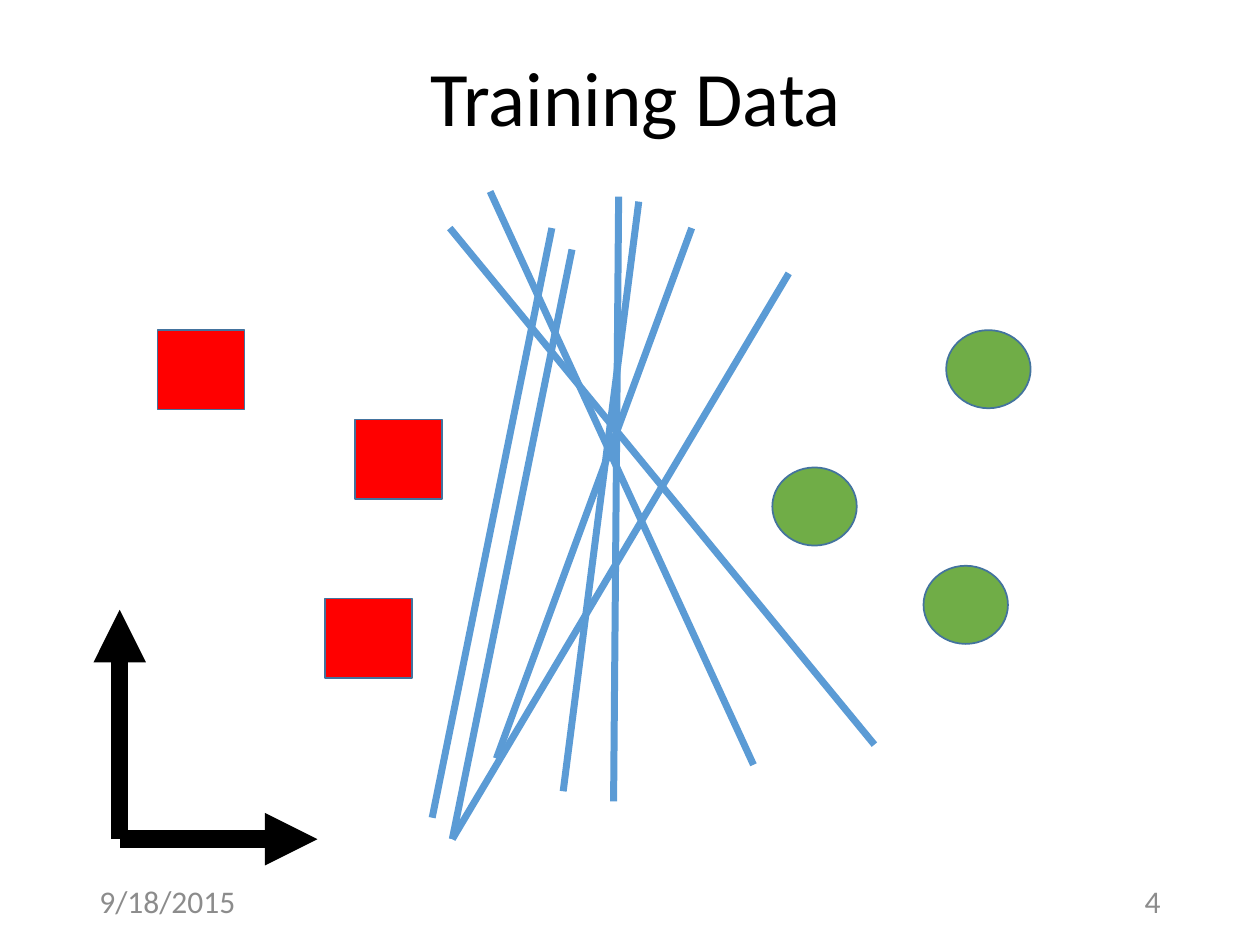
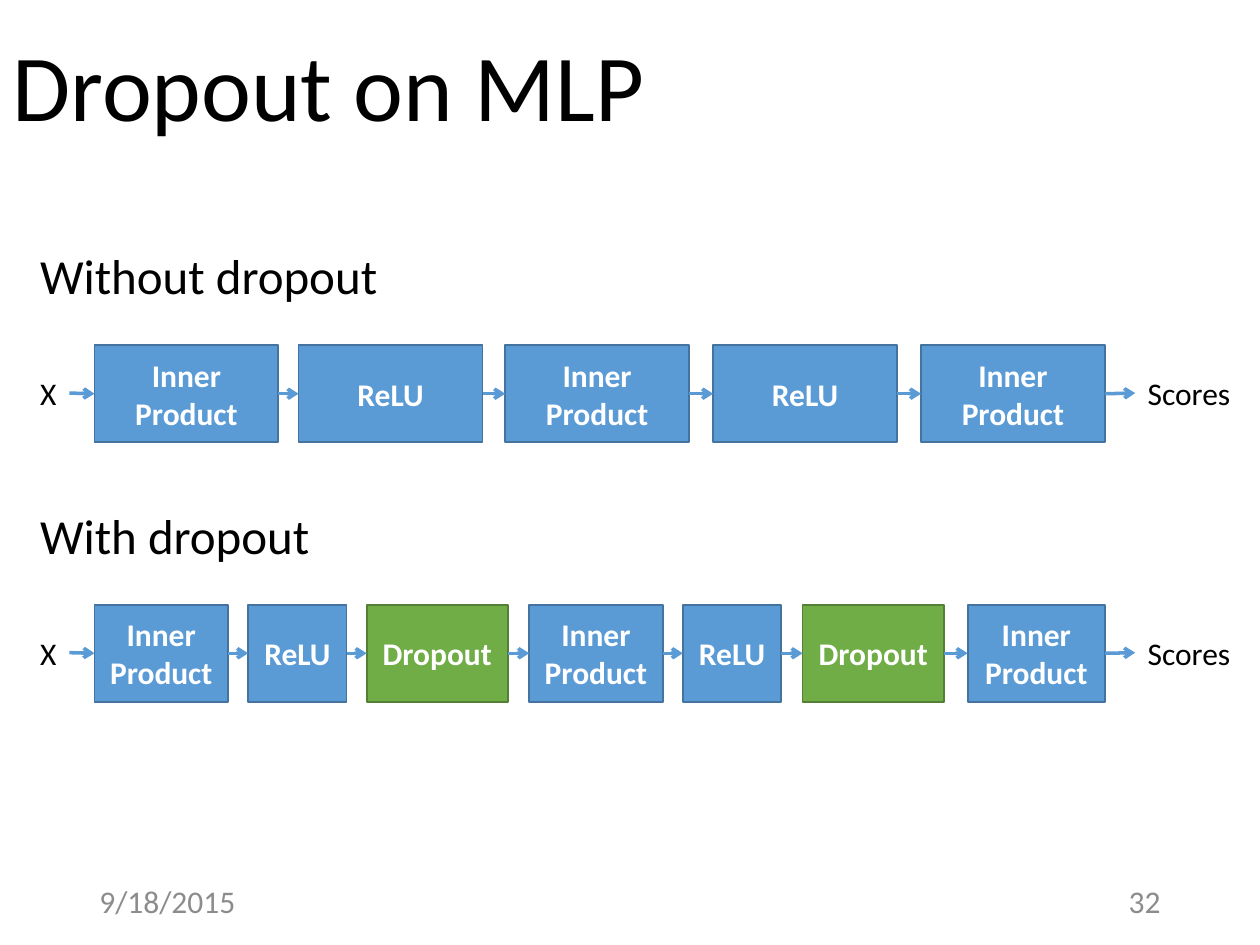
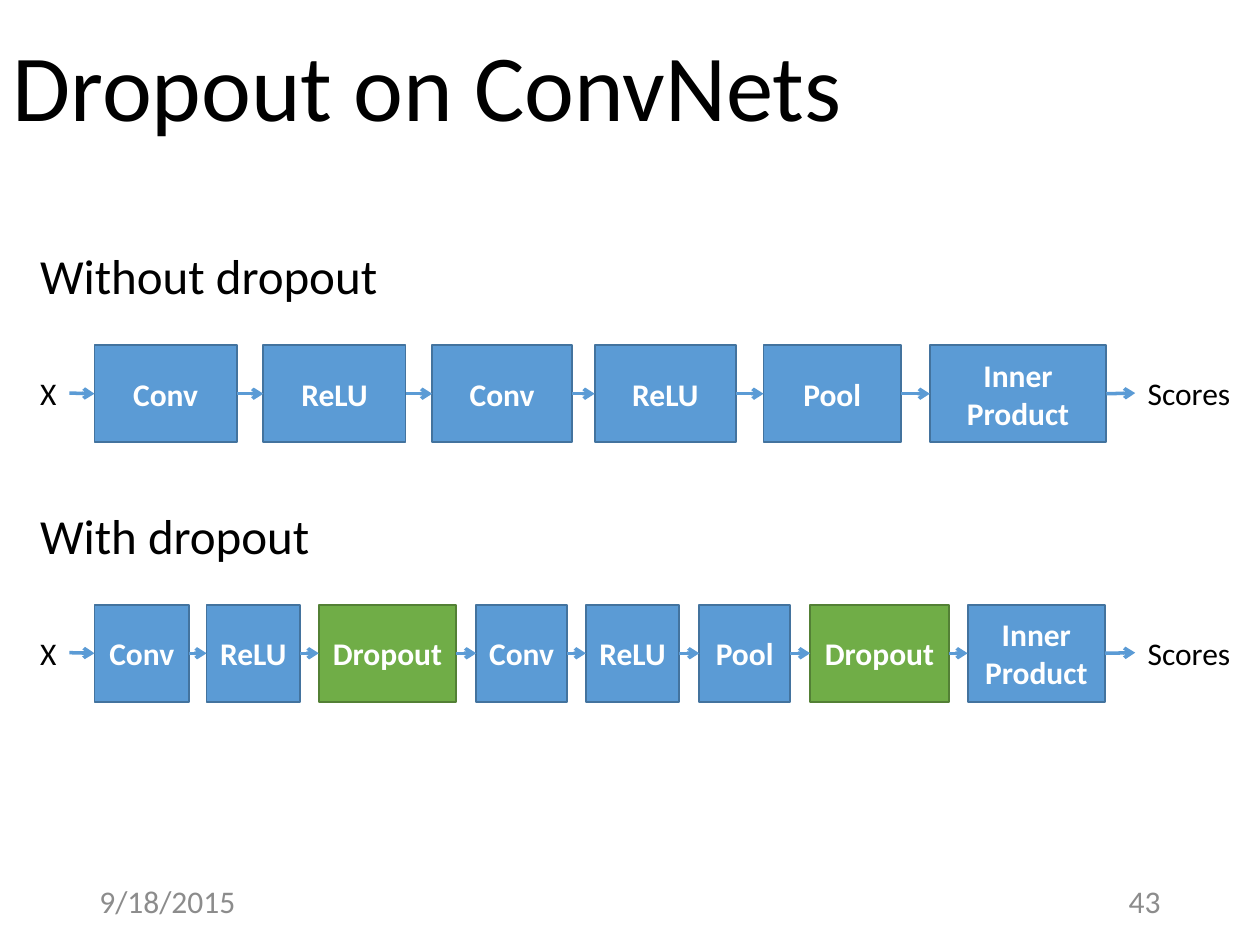
"""Build three slides on training data and dropout."""
from lxml import etree
from pptx import Presentation
from pptx.dml.color import RGBColor
from pptx.enum import shapes, text
from pptx.oxml import ns
from pptx.util import Inches, Pt

FONT = "Calibri"
BLACK = RGBColor(0x00, 0x00, 0x00)
WHITE = RGBColor(0xFF, 0xFF, 0xFF)
GRAY = RGBColor(0x8C, 0x8C, 0x8C)
RED = RGBColor(0xFF, 0x00, 0x00)
BLUE = RGBColor(0x5B, 0x9B, 0xD5)
DARK_BLUE = RGBColor(0x43, 0x73, 0x9E)
GREEN = RGBColor(0x70, 0xAD, 0x47)
DARK_GREEN = RGBColor(0x53, 0x80, 0x35)

DATE = "9/18/2015"
TITLE_BOX = (0, 0, 9.61, 1.45)
PLOT_BOX = (0.95, 1.52, 7.23, 5.14)
ROW_LEFT = 0.22
ROW_TOPS = (1.9, 3.96)
ROW_HEADINGS = ("Without dropout", "With dropout")
BLOCK_HEIGHT = 0.77

SEPARATORS = (
    ((4.54, 0.29), (2.99, 4.5)),
    ((3.43, 0.29), (2.48, 4.97)),
    ((2.94, 0), (5.03, 4.55)),
    ((5.31, 0.65), (2.64, 5.14)),
    ((2.62, 0.29), (5.99, 4.39)),
    ((3.59, 0.46), (2.64, 5.14)),
    ((4.12, 0.08), (3.52, 4.76)),
    ((3.96, 0.04), (3.92, 4.84)),
)
CIRCLES = ((6.56, 1.1), (5.18, 2.19), (6.38, 2.97))
SQUARES = ((1.63, 3.23), (0.3, 1.1), (1.87, 1.81))

MLP_ROWS = (
    (("Inner Product", 0.75, 1.46), ("ReLU", 2.37, 1.46),
     ("Inner Product", 4.01, 1.46), ("ReLU", 5.66, 1.46),
     ("Inner\nProduct", 7.31, 1.46)),
    (("Inner\nProduct", 0.75, 1.06), ("ReLU", 1.97, 0.78),
     ("Dropout", 2.91, 1.12), ("Inner\nProduct", 4.2, 1.06),
     ("ReLU", 5.42, 0.78), ("Dropout", 6.37, 1.12),
     ("Inner\nProduct", 7.68, 1.09)),
)
CONVNET_ROWS = (
    (("Conv", 0.75, 1.13), ("ReLU", 2.09, 1.13), ("Conv", 3.43, 1.11),
     ("ReLU", 4.72, 1.12), ("Pool", 6.06, 1.09),
     ("Inner\nProduct", 7.38, 1.4)),
    (("Conv", 0.75, 0.75), ("ReLU", 1.64, 0.74), ("Dropout", 2.53, 1.09),
     ("Conv", 3.78, 0.72), ("ReLU", 4.65, 0.74), ("Pool", 5.55, 0.72),
     ("Dropout", 6.43, 1.1), ("Inner\nProduct", 7.68, 1.09)),
)


def write(frame, content, size=18, color=BLACK, bold=False,
          align=text.PP_ALIGN.LEFT, anchor=text.MSO_ANCHOR.TOP, spacing=1.0):
    """Fill a text frame with formatted paragraphs."""
    frame.word_wrap = True
    frame.auto_size = text.MSO_AUTO_SIZE.NONE
    frame.vertical_anchor = anchor
    frame.text = content
    for para in frame.paragraphs:
        para.alignment = align
        para.line_spacing = spacing
        for span in para.runs:
            span.font.name = FONT
            span.font.size = Pt(size)
            span.font.bold = bold
            span.font.color.rgb = color


def add_text(page, content, box, **style):
    """Add a text box and return it."""
    label = page.shapes.add_textbox(*map(Inches, box))
    write(label.text_frame, content, **style)
    return label


def add_block(page, kind, box, fill, outline=DARK_BLUE):
    """Add a flat filled shape and return it."""
    block = page.shapes.add_shape(kind, *map(Inches, box))
    block.shadow.inherit = False
    block.fill.solid()
    block.fill.fore_color.rgb = fill
    block.line.color.rgb = outline
    block.line.width = Pt(1)
    return block


def add_line(page, start=(0, 0), end=(0, 0), color=BLUE, width=4, head=None):
    """Add a straight line, with an arrowhead when one is named."""
    line = page.shapes.add_connector(
        shapes.MSO_CONNECTOR.STRAIGHT, *map(Inches, (*start, *end)))
    line.line.color.rgb = color
    line.line.width = Pt(width)
    if head:
        outline = line.line._get_or_add_ln()
        etree.SubElement(outline, ns.qn("a:tailEnd"), type=head)
    etree.SubElement(line._element.spPr, ns.qn("a:effectLst"))
    return line


def start_page(deck, title, number, box=TITLE_BOX, **style):
    """Add a slide with its title, date and number."""
    page = deck.slides.add_slide(deck.slide_layouts[5])
    heading = page.shapes.title
    heading.left, heading.top, heading.width, heading.height = map(Inches, box)
    write(heading.text_frame, title, **style)
    footer = {"color": GRAY, "anchor": text.MSO_ANCHOR.MIDDLE}
    add_text(page, DATE, (0.69, 6.95, 2.25, 0.4), **footer)
    add_text(page, str(number), (7.06, 6.95, 2.25, 0.4),
             align=text.PP_ALIGN.RIGHT, **footer)
    return page


def draw_plot(page, box):
    """Draw the axes, two classes of points and candidate separators."""
    left, top, _, height = box

    def place(point):
        """Shift a point into the plot box."""
        return left + point[0], top + point[1]

    for start, end in SEPARATORS:
        add_line(page, place(start), place(end))
    for point in CIRCLES:
        add_block(page, shapes.MSO_SHAPE.OVAL, (*place(point), 0.67, 0.62), GREEN)
    for point in SQUARES:
        add_block(page, shapes.MSO_SHAPE.RECTANGLE, (*place(point), 0.69, 0.63), RED)
    for tip in ((0, height - 1.82), (1.57, height)):
        add_line(page, place((0, height)), place(tip), BLACK, 10, "triangle")


def draw_network(page, heading, layers, left, top):
    """Draw a heading above a chain of layers from input to scores."""
    add_text(page, heading, (left, top, 2.91, 0.57), size=28)
    chain = [add_text(page, "X", (left, top + 1.02, 0.33, 0.4))]
    for name, layer_left, width in layers:
        fill, outline = (GREEN, DARK_GREEN) if name == "Dropout" else (BLUE, DARK_BLUE)
        block = add_block(page, shapes.MSO_SHAPE.RECTANGLE,
                          (layer_left, top + 0.84, width, BLOCK_HEIGHT), fill, outline)
        block.text_frame.margin_left = block.text_frame.margin_right = Inches(0.08)
        write(block.text_frame, name, color=WHITE, bold=True,
              align=text.PP_ALIGN.CENTER, anchor=text.MSO_ANCHOR.MIDDLE)
        chain.append(block)
    chain.append(add_text(page, "Scores", (left + 8.79, top + 1.02, 0.98, 0.4)))
    for source, target in zip(chain, chain[1:]):
        arrow = add_line(page, width=2, head="arrow")
        arrow.begin_connect(source, 3)
        arrow.end_connect(target, 1)


def training_page(deck):
    """Build the training data slide."""
    page = start_page(deck, "Training Data", 4, (3.32, 0.34, 3.6, 0.84), size=44)
    draw_plot(page, PLOT_BOX)


def dropout_page(deck, title, number, rows):
    """Build a slide that compares a network without and with dropout."""
    page = start_page(deck, title, number, size=54, spacing=0.9,
                      anchor=text.MSO_ANCHOR.MIDDLE)
    for heading, layers, top in zip(ROW_HEADINGS, rows, ROW_TOPS):
        draw_network(page, heading, layers, ROW_LEFT, top)


def main():
    """Build and save the deck."""
    deck = Presentation()
    deck.slide_width, deck.slide_height = Inches(10), Inches(7.5)
    training_page(deck)
    dropout_page(deck, "Dropout on MLP", 32, MLP_ROWS)
    dropout_page(deck, "Dropout on ConvNets", 43, CONVNET_ROWS)
    deck.save("out.pptx")


if __name__ == "__main__":
    main()
